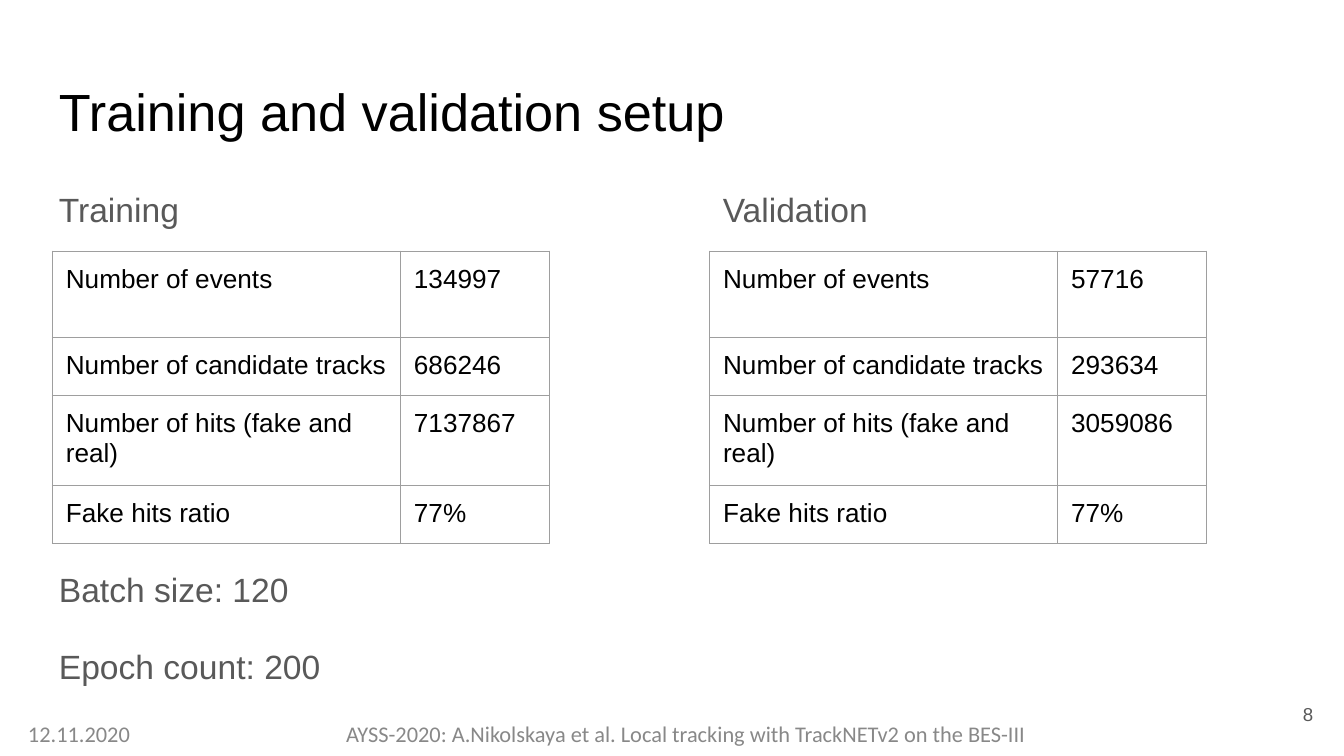
from dataclasses import dataclass

from lxml import etree
from pptx import Presentation
from pptx.dml.color import RGBColor as RGB
from pptx.enum.text import MSO_ANCHOR as Anchor, PP_ALIGN as Align
from pptx.oxml.ns import qn
from pptx.util import Inches, Pt


@dataclass(frozen=True)
class Theme:
    ink: str = "000000"
    body: str = "595959"
    footer: str = "888888"
    border: str = "9E9E9E"
    border_width: float = 0.75
    font: str = "Arial"
    footer_font: str = "Calibri"
    title_size: int = 28
    body_size: int = 18
    table_size: int = 14
    footer_size: int = 12
    number_size: int = 10


@dataclass(frozen=True)
class Box:
    left: float
    top: float
    width: float
    height: float


@dataclass(frozen=True)
class Line:
    text: str
    before: float = 0


@dataclass(frozen=True)
class Dataset:
    lines: tuple[Line, ...]
    text_left: float
    table_left: float
    values: tuple[str, ...]


THEME = Theme()
MARGIN = Inches(0.1)
LABELS = (
    "Number of events",
    "Number of candidate tracks",
    "Number of hits (fake and real)",
    "Fake hits ratio",
)
COLUMN_WIDTHS = (2.59, 1.11)
ROW_HEIGHTS = (0.64, 0.42, 0.42, 0.42)
TABLE_TOP = 1.87
SETTINGS_GAP = 179
DATASETS = (
    Dataset(
        (
            Line("Training"),
            Line("Batch size: 120", SETTINGS_GAP),
            Line("Epoch count: 200", 16),
        ),
        0.34, 0.39, ("134997", "686246", "7137867", "77%"),
    ),
    Dataset(
        (Line("Validation"),),
        5.28, 5.28, ("57716", "293634", "3059086", "77%"),
    ),
)


def write(p, text: str, *, size: float, color: str, font: str = THEME.font,
          align=Align.LEFT, spacing: float = 1.0, before: float = 0) -> None:
    p.alignment = align
    p.line_spacing = spacing
    p.space_before = Pt(before)
    r = p.add_run()
    r.text = text
    r.font.name = font
    r.font.size = Pt(size)
    r.font.color.rgb = RGB.from_string(color)


def add_text(s, box: Box, *lines: Line, anchor=Anchor.TOP, **style) -> None:
    sp = s.shapes.add_textbox(*map(Inches, (box.left, box.top, box.width, box.height)))
    tf = sp.text_frame
    tf.word_wrap = True
    tf.vertical_anchor = anchor
    tf.margin_left = tf.margin_right = tf.margin_top = tf.margin_bottom = MARGIN
    for i, line in enumerate(lines):
        p = tf.add_paragraph() if i else tf.paragraphs[0]
        write(p, line.text, before=line.before, **style)


def set_borders(cell) -> None:
    tc_pr = cell._tc.get_or_add_tcPr()
    for i, side in enumerate(("lnL", "lnR", "lnT", "lnB")):
        ln = etree.Element(qn(f"a:{side}"), w=str(Pt(THEME.border_width)))
        fill = etree.SubElement(ln, qn("a:solidFill"))
        etree.SubElement(fill, qn("a:srgbClr"), val=THEME.border)
        tc_pr.insert(i, ln)


def add_counts(s, data: Dataset) -> None:
    table = s.shapes.add_table(
        len(LABELS), len(COLUMN_WIDTHS), Inches(data.table_left), Inches(TABLE_TOP),
        Inches(sum(COLUMN_WIDTHS)), Inches(sum(ROW_HEIGHTS)),
    ).table
    table.first_row = table.horz_banding = False
    for column, width in zip(table.columns, COLUMN_WIDTHS):
        column.width = Inches(width)
    for row, height, texts in zip(table.rows, ROW_HEIGHTS, zip(LABELS, data.values)):
        row.height = Inches(height)
        for cell, text in zip(row.cells, texts):
            cell.fill.background()
            cell.margin_left = cell.margin_right = MARGIN
            cell.margin_top = cell.margin_bottom = MARGIN
            set_borders(cell)
            write(cell.text_frame.paragraphs[0], text,
                  size=THEME.table_size, color=THEME.ink)


def main() -> None:
    prs = Presentation()
    prs.slide_width = Inches(10)
    prs.slide_height = prs.slide_width * 9 // 16
    s = prs.slides.add_slide(prs.slide_layouts[6])

    add_text(s, Box(0.34, 0.49, 9.32, 0.63), Line("Training and validation setup"),
             size=THEME.title_size, color=THEME.ink)
    for data in DATASETS:
        add_text(s, Box(data.text_left, 1.26, 4.37, 3.74), *data.lines,
                 size=THEME.body_size, color=THEME.body, spacing=1.15)
    for data in DATASETS:
        add_counts(s, data)

    add_text(s, Box(9.27, 5.1, 0.6, 0.43), Line("8"), anchor=Anchor.MIDDLE,
             size=THEME.number_size, color=THEME.body, align=Align.RIGHT)
    footer = dict(size=THEME.footer_size, color=THEME.footer, font=THEME.footer_font)
    add_text(s, Box(0.11, 5.26, 3.28, 0.43), Line("12.11.2020"), **footer)
    add_text(
        s, Box(2.43, 5.26, 5.35, 0.38),
        Line("AYSS-2020: A.Nikolskaya et al. Local tracking with TrackNETv2 on the BES-III"),
        align=Align.CENTER, **footer,
    )
    prs.save("out.pptx")


if __name__ == "__main__":
    main()
